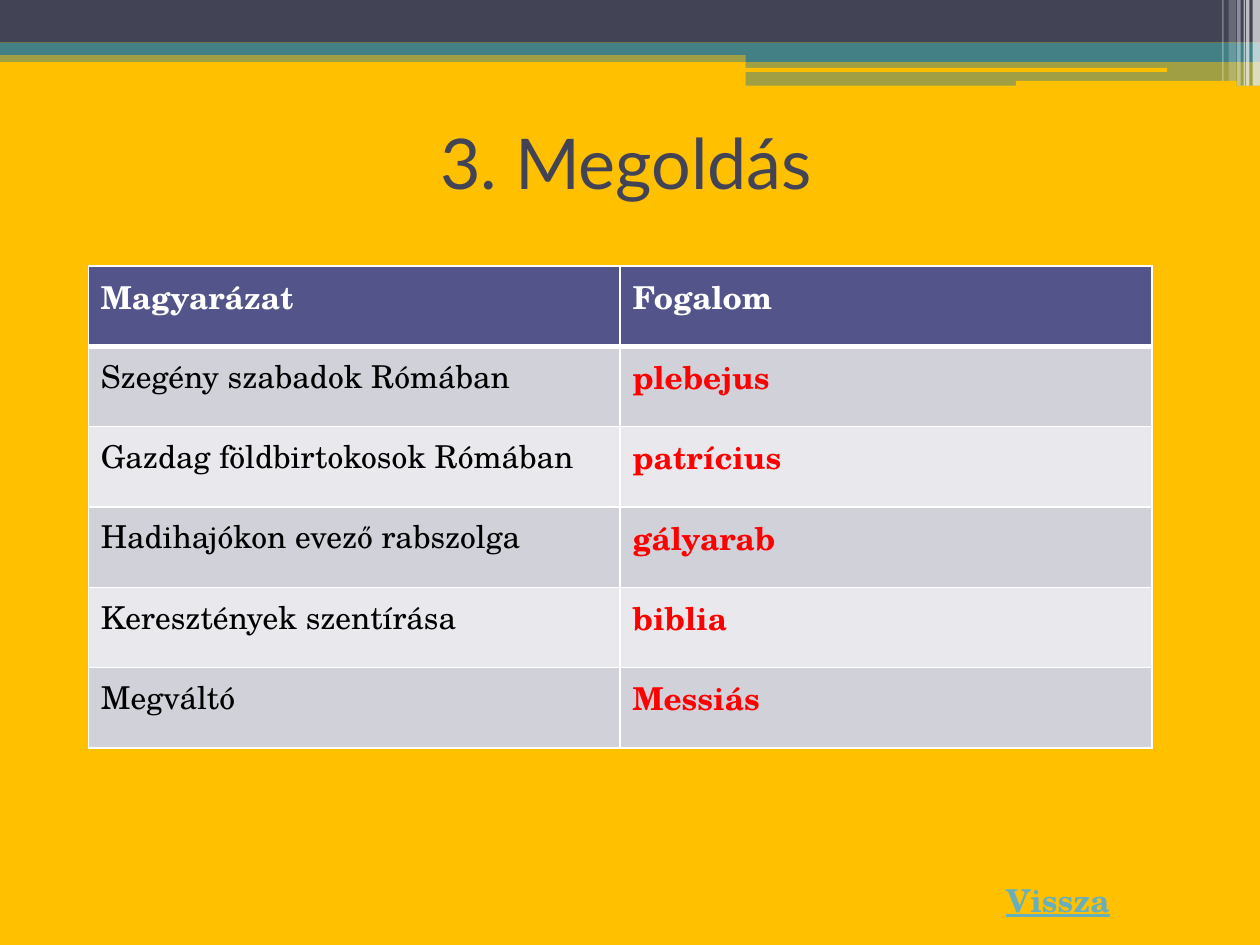
"""Builds the solution slide: a table of Roman history terms under a banded header."""
from lxml import etree
from pptx import Presentation
from pptx import util as u
from pptx.dml.color import RGBColor
from pptx.enum import shapes, text
from pptx.oxml.ns import qn


def color(value):
    return RGBColor.from_string(value)


def style(paragraph, face, size, value, bold=False):
    font = paragraph.font
    font.name, font.size, font.bold = face, u.Pt(size), bold
    font.color.rgb = color(value)


SERIF = "TeX Gyre Schola"
SLATE, TEAL, AMBER, WHITE = "424456", "438086", "FFC000", "FFFFFF"

deck = Presentation()
deck.slide_width, deck.slide_height = u.Cm(25.4), u.Cm(19.05)
slide = deck.slides.add_slide(deck.slide_layouts[6])
slide.background.fill.solid()
slide.background.fill.fore_color.rgb = color(AMBER)

RECT, ROUND = shapes.MSO_SHAPE.RECTANGLE, shapes.MSO_SHAPE.ROUNDED_RECTANGLE
bands = [
    (RECT, 0, 1.02, 25.4, 0.23, TEAL, 50),
    (RECT, 0, 0, 25.4, 0.86, SLATE, 100),
    (RECT, 0, 0.86, 25.4, 0.25, TEAL, 100),
    (RECT, 15.03, 0.99, 10.37, 0.26, TEAL, 100),
    (RECT, 15.03, 1.25, 10.37, 0.48, TEAL, 50),
    (ROUND, 15.02, 1.37, 8.51, 0.08, AMBER, 100),
    (ROUND, 20.48, 1.63, 4.45, 0.1, AMBER, 100),
]
stripes = [
    (25.25, 0.15, 1.73, 65),
    (25.12, 0.07, 1.73, 65),
    (25.07, 0.03, 1.73, 60),
    (24.94, 0.07, 1.73, 40),
    (24.77, 0.15, 1.63, 20),
    (24.64, 0.03, 1.63, 30),
]
bands += [(RECT, left, 0, width, height, WHITE, opacity)
          for left, width, height, opacity in stripes]

for kind, left, top, width, height, tint, opacity in bands:
    band = slide.shapes.add_shape(kind, u.Cm(left), u.Cm(top), u.Cm(width), u.Cm(height))
    band.shadow.inherit = False
    band.line.fill.background()
    band.fill.solid()
    band.fill.fore_color.rgb = color(tint)
    if opacity < 100:
        tint_xml = band.fill._xPr.find(".//" + qn("a:srgbClr"))
        etree.SubElement(tint_xml, qn("a:alpha"), val=str(opacity * 1000))

title = slide.shapes.add_textbox(u.Cm(1.19), u.Cm(1.78), u.Cm(22.86), u.Cm(2.97)).text_frame
title.word_wrap = True
title.vertical_anchor = text.MSO_ANCHOR.MIDDLE
title.text = "3. Megoldás"
title.paragraphs[0].alignment = text.PP_ALIGN.CENTER
style(title.paragraphs[0], "Lato", 40, SLATE)

back = slide.shapes.add_textbox(u.Cm(20.04), u.Cm(17.63), u.Cm(2.62), u.Cm(1.02)).text_frame
back.word_wrap = False
back.text = "Vissza"
style(back.paragraphs[0], SERIF, 18, "67AFBD", True)
back.paragraphs[0].font.underline = True

terms = [
    ("Magyarázat", "Fogalom"),
    ("Szegény szabadok Rómában", "plebejus"),
    ("Gazdag földbirtokosok Rómában", "patrícius"),
    ("Hadihajókon evező rabszolga", "gályarab"),
    ("Keresztények szentírása", "biblia"),
    ("Megváltó", "Messiás"),
]
glossary = slide.shapes.add_table(
    len(terms), 2, u.Cm(1.78), u.Cm(5.36), u.Cm(21.44), u.Cm(9.72)).table

for row, entry in enumerate(terms):
    for column, wording in enumerate(entry):
        cell = glossary.cell(row, column)
        cell.text = wording
        ink = WHITE if row == 0 else ("000000", "FF0000")[column]
        style(cell.text_frame.paragraphs[0], SERIF, 18, ink, row == 0 or column == 1)
        properties = cell._tc.get_or_add_tcPr()
        for side in "LRTB":
            under_header = (row, side) in ((0, "B"), (1, "T"))
            border = etree.SubElement(properties, qn("a:ln" + side),
                                      w=str(u.Pt(3 if under_header else 1)))
            paint = etree.SubElement(border, qn("a:solidFill"))
            etree.SubElement(paint, qn("a:srgbClr"), val=WHITE)
        cell.fill.solid()
        cell.fill.fore_color.rgb = color(
            "53548A" if row == 0 else ("E9E9ED", "D1D1DA")[row % 2])

deck.save("out.pptx")
